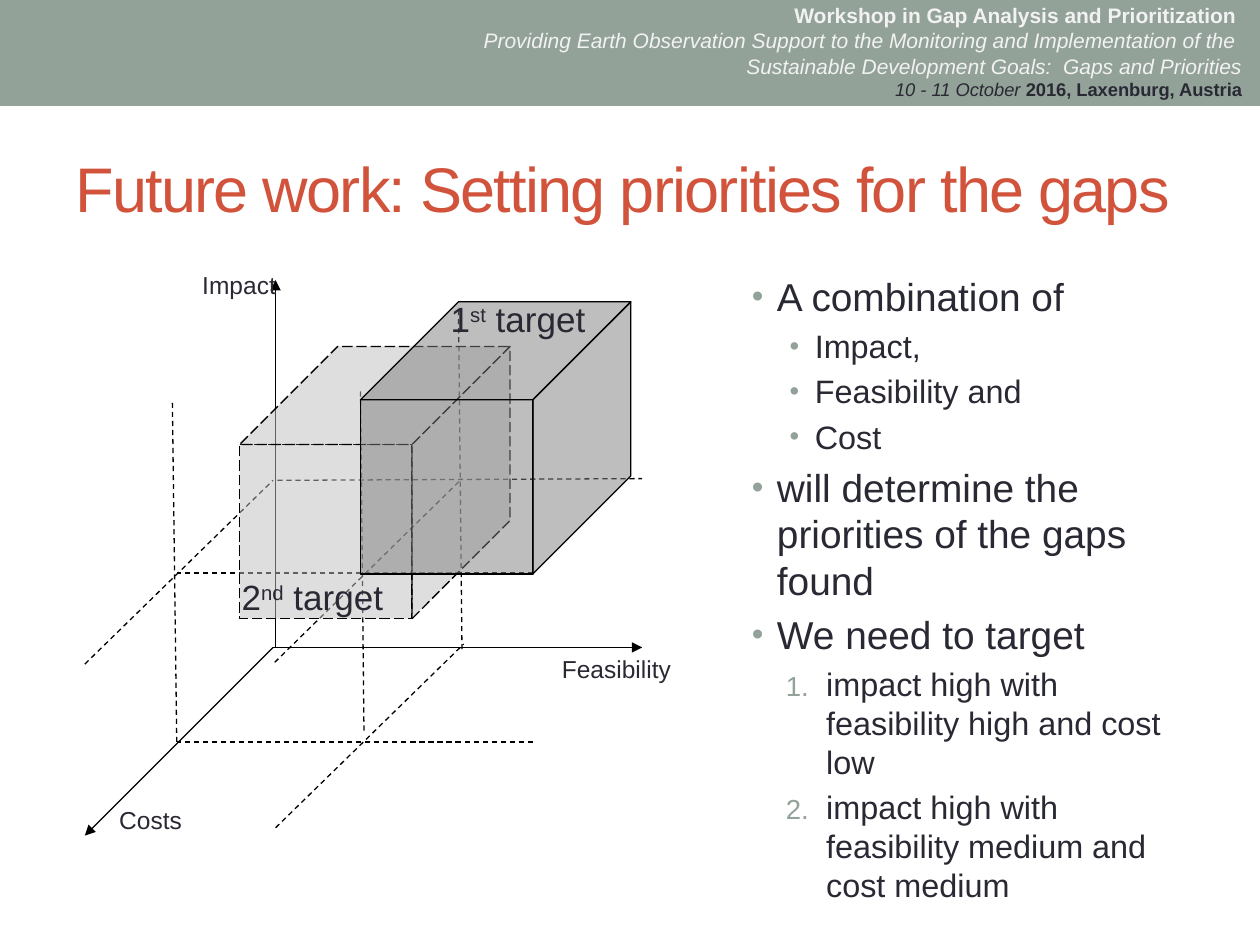
from lxml import etree
from pptx import Presentation
from pptx.dml.color import RGBColor
from pptx.enum import dml, shapes, text
from pptx.oxml.ns import qn
from pptx.util import Pt

INK, LIGHT, SAGE, RED, BLACK = "292934", "F2F2F2", "93A299", "D2533C", "000000"
CUBE_W, CUBE_H, CUBE_DEPTH = 98.5, 99.5, 56
DASH, LONG_DASH = dml.MSO_LINE.DASH, dml.MSO_LINE.LONG_DASH

AXES = [(157.5, 370, 157.5, 160), (156, 370, 367, 370), (156, 370, 48.5, 477.5)]
GUIDES = [
    (158.5, 274.5, 367, 273.5), (264, 371, 262, 175), (101, 424, 98.5, 228),
    (304.5, 424, 101, 424), (48.5, 379.5, 156, 274.5), (157.5, 473, 265, 368),
    (304.5, 327.5, 101, 327.5), (157, 378.5, 264, 273.5), (208, 417.5, 206, 221.5),
]
AXIS_LABELS = [
    ("Feasibility", 314, 370, 147), ("Impact", 108.5, 151, 61), ("Costs", 61, 456.5, 123),
]
HEADER = [
    [("Workshop in Gap Analysis and Prioritization ", 12, LIGHT, True, False)],
    [("Providing Earth Observation Support to the Monitoring and Implementation of the ",
      12, LIGHT, False, True)],
    [("Sustainable Development Goals:  Gaps and Priorities", 12, LIGHT, False, True)],
    [("10 - 11 October ", 10.5, INK, False, True),
     ("2016, Laxenburg, Austria", 10.5, INK, True, False)],
]
POINTS = [
    ("A combination of", "main"),
    ("Impact,", "sub"),
    ("Feasibility and", "sub"),
    ("Cost", "sub"),
    ("will determine the priorities of the gaps found", "main"),
    ("We need to target", "main"),
    ("impact high with feasibility high and cost low", "number"),
    ("impact high with feasibility medium and cost medium", "number"),
]
# kind: (level, left margin, hanging indent, size)
POINT_STYLES = {
    "main": (0, 14.4, 14.4, 22.2),
    "sub": (1, 36, 14.4, 18.5),
    "number": (1, 42.5, 23, 18.5),
}


def rgb(color):
    return RGBColor.from_string(color)


def style_run(r, size, color=INK, bold=False, italic=False):
    r.font.name = "Arial"
    r.font.size = Pt(size)
    r.font.color.rgb = rgb(color)
    r.font.bold = bold
    r.font.italic = italic


def add_run(p, words, size, *style):
    r = p.add_run()
    r.text = words
    style_run(r, size, *style)
    return r


def add_box(s, x, y, w, h):
    tf = s.shapes.add_textbox(Pt(x), Pt(y), Pt(w), Pt(h)).text_frame
    tf.word_wrap = True
    return tf


def add_header(s):
    band = s.shapes.add_shape(shapes.MSO_SHAPE.RECTANGLE, 0, 0, Pt(720), Pt(60.5))
    band.shadow.inherit = False
    band.fill.solid()
    band.fill.fore_color.rgb = rgb(SAGE)
    band.line.fill.background()
    tf = add_box(s, 150.5, -2, 566.5, 63.5)
    for i, runs in enumerate(HEADER):
        p = tf.add_paragraph() if i else tf.paragraphs[0]
        p.alignment = text.PP_ALIGN.RIGHT
        for run in runs:
            add_run(p, *run)


def add_title(s):
    tf = add_box(s, 36, 68.5, 648, 77.5)
    tf.vertical_anchor = text.MSO_ANCHOR.MIDDLE
    r = add_run(tf.paragraphs[0], "Future work: Setting priorities for the gaps", 36, RED)
    r.font._element.set("spc", "-100")


def add_line(s, x1, y1, x2, y2, dash=None, arrow=False):
    line = s.shapes.add_connector(
        shapes.MSO_CONNECTOR.STRAIGHT, Pt(x1), Pt(y1), Pt(x2), Pt(y2))
    style_line(line, dash)
    if arrow:
        etree.SubElement(line.line._get_or_add_ln(), qn("a:tailEnd"), type="triangle")
    etree.SubElement(line._element.spPr, qn("a:effectLst"))


def style_line(sp, dash):
    sp.line.color.rgb = rgb(BLACK)
    sp.line.width = Pt(0.75)
    if dash:
        sp.line.dash_style = dash


def add_face(s, corners, color, dash):
    """Draw one half-transparent side of a cube."""
    points = [(Pt(x), Pt(y)) for x, y in corners]
    builder = s.shapes.build_freeform(*points[0])
    builder.add_line_segments(points[1:], close=True)
    sp = builder.convert_to_shape()
    sp.shadow.inherit = False
    sp.fill.solid()
    sp.fill.fore_color.rgb = rgb(color)
    fill_color = sp._element.spPr.find(qn("a:solidFill"))[0]
    etree.SubElement(fill_color, qn("a:alpha"), val="50000")
    style_line(sp, dash)


def add_cube(s, x, y, color, dash=None):
    """Draw front, right and top faces; x, y is the front's top left corner."""
    right, bottom, d = x + CUBE_W, y + CUBE_H, CUBE_DEPTH
    front = [(x, y), (right, y), (right, bottom), (x, bottom)]
    side = [(right, bottom), (right + d, bottom - d), (right + d, y - d), (right, y)]
    top = [(right + d, y - d), (right, y), (x, y), (x + d, y - d)]
    for corners in (front, side, top):
        add_face(s, corners, color, dash)


def add_axis_label(s, words, x, y, w):
    add_run(add_box(s, x, y, w, 47.5).paragraphs[0], words, 14)


def add_target_label(s, number, ordinal, x, y):
    p = add_box(s, x, y, 124.5, 47.5).paragraphs[0]
    add_run(p, number, 20)
    add_run(p, ordinal, 20).font._element.set("baseline", "30000")
    add_run(p, " target", 20)


def add_bullet(p, kind):
    level, margin, hanging, _ = POINT_STYLES[kind]
    p.level = level
    pPr = p._p.get_or_add_pPr()
    pPr.set("marL", str(Pt(margin)))
    pPr.set("indent", str(-Pt(hanging)))
    color = etree.SubElement(pPr, qn("a:buClr"))
    etree.SubElement(color, qn("a:srgbClr"), val=SAGE)
    etree.SubElement(pPr, qn("a:buSzPct"), val="85000")
    etree.SubElement(pPr, qn("a:buFont"), typeface="Arial")
    if kind == "number":
        etree.SubElement(pPr, qn("a:buAutoNum"), type="arabicPeriod")
    else:
        etree.SubElement(pPr, qn("a:buChar"), char="•")


def add_points(s):
    tf = add_box(s, 422.5, 152.5, 261.5, 332.5)
    for i, (words, kind) in enumerate(POINTS):
        p = tf.add_paragraph() if i else tf.paragraphs[0]
        size = POINT_STYLES[kind][-1]
        add_bullet(p, kind)
        if i:
            p.space_before = Pt(round(size * 0.2, 1))
        add_run(p, words, size)


def main():
    prs = Presentation()
    prs.slide_width, prs.slide_height = Pt(720), Pt(540)
    s = prs.slides.add_slide(prs.slide_layouts[6])
    add_header(s)
    add_title(s)
    for axis in AXES:
        add_line(s, *axis, arrow=True)
    for label in AXIS_LABELS:
        add_axis_label(s, *label)
    for guide in GUIDES:
        add_line(s, *guide, dash=DASH)
    add_cube(s, 137, 254, "BFBFBF", LONG_DASH)
    add_cube(s, 206, 228.5, "7F7F7F")
    add_target_label(s, "1", "st", 250.5, 166.5)
    add_target_label(s, "2", "nd", 131, 325.5)
    add_points(s)
    prs.save("out.pptx")


if __name__ == "__main__":
    main()
